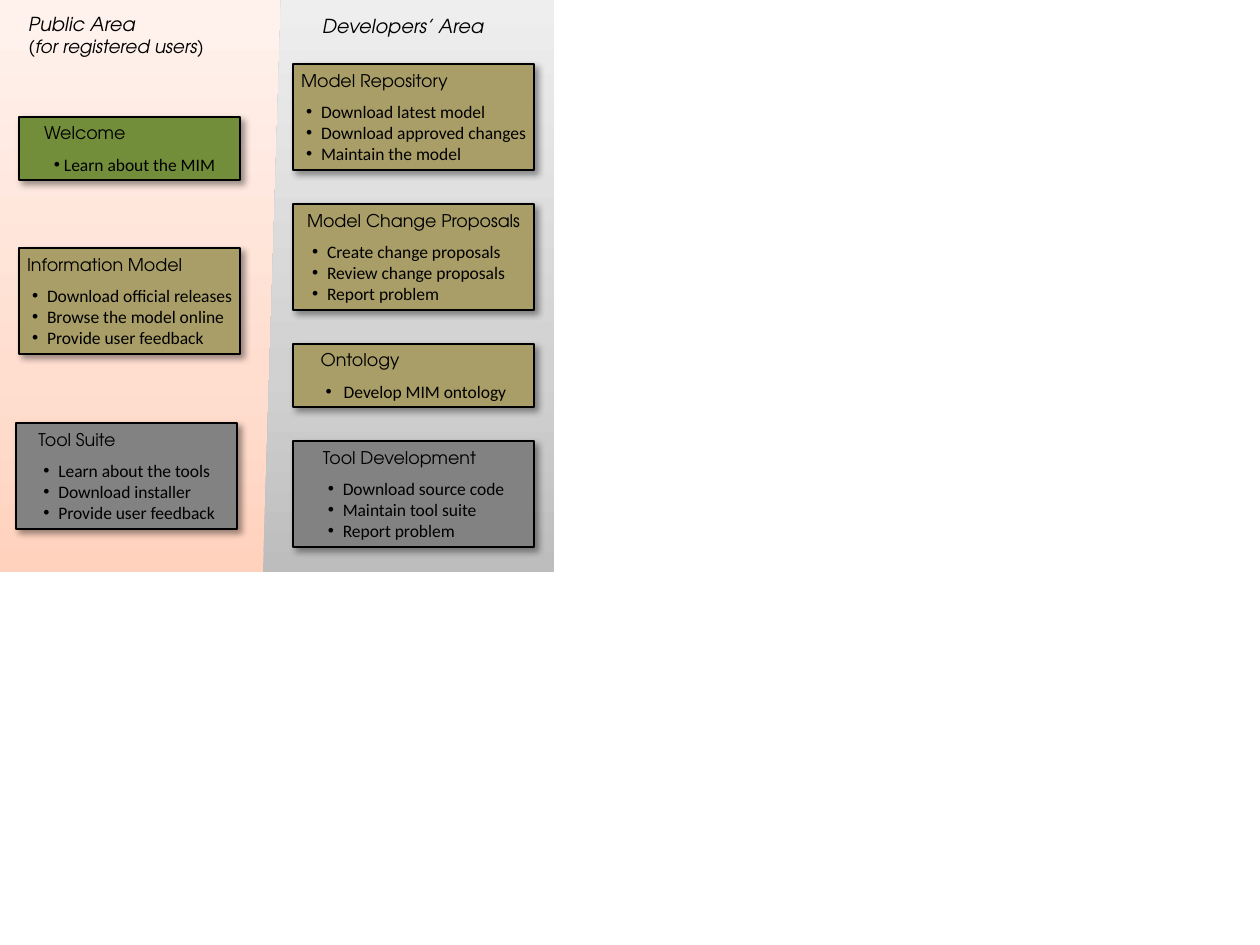
from collections import namedtuple

from lxml.etree import SubElement
from pptx import Presentation
from pptx.dml.color import RGBColor
from pptx.enum.shapes import MSO_SHAPE
from pptx.enum.text import MSO_ANCHOR, MSO_AUTO_SIZE
from pptx.oxml.ns import qn
from pptx.util import Emu, Pt

PX_PER_INCH = 126
HEADING_FONT = "TeX Gyre Adventor"
BODY_FONT = "Calibri"

BLACK = RGBColor(0x00, 0x00, 0x00)
GREEN = RGBColor(0x72, 0x8E, 0x3A)
KHAKI = RGBColor(0xA9, 0x9E, 0x67)
GREY = RGBColor(0x82, 0x82, 0x82)
GREY_FADE = [(0, RGBColor(0xBD, 0xBD, 0xBD)),
             (35, RGBColor(0xD1, 0xD1, 0xD1)),
             (100, RGBColor(0xEE, 0xEE, 0xEE))]
PEACH_FADE = [(0, RGBColor(0xFF, 0xD2, 0xBD)),
              (35, RGBColor(0xFF, 0xDE, 0xD0)),
              (100, RGBColor(0xFF, 0xF2, 0xED))]

Box = namedtuple("Box", "left top width height")
Card = namedtuple("Card", "title items color indent hanging", defaults=(20, 15))

CARD_INSET = 5
CARD_GAP = 34

WELCOME = Card("Welcome", ["Learn about the MIM"], GREEN, hanging=10)
INFORMATION_MODEL = Card(
    "Information Model",
    ["Download official releases", "Browse the model online", "Provide user feedback"],
    KHAKI)
TOOL_SUITE = Card(
    "Tool Suite",
    ["Learn about the tools", "Download installer", "Provide user feedback"], GREY)
DEVELOPER_CARDS = [
    Card("Model Repository",
         ["Download latest model", "Download approved changes", "Maintain the model"],
         KHAKI),
    Card("Model Change Proposals",
         ["Create change proposals", "Review change proposals", "Report problem"],
         KHAKI),
    Card("Ontology", ["Develop MIM ontology"], KHAKI, indent=23, hanging=18),
    Card("Tool Development",
         ["Download source code", "Maintain tool suite", "Report problem"], GREY),
]


def px(length):
    return Emu(round(length * 914400 / PX_PER_INCH))


def place(box):
    return [px(length) for length in box]


def card_height(card):
    return 42 + 21 * len(card.items) + (1 if len(card.items) > 1 else 0)


def add_faded_shape(slide, kind, box, stops):
    """Add a borderless shape whose colour fades from bottom to top."""
    shape = slide.shapes.add_shape(kind, *place(box))
    shape.shadow.inherit = False
    shape.line.fill.background()
    shape.fill.gradient()
    shape.fill.gradient_angle = 90
    stop_list = shape._element.spPr.find(".//" + qn("a:gsLst"))
    for stop in list(stop_list):
        stop_list.remove(stop)
    for position, color in stops:
        stop = SubElement(stop_list, qn("a:gs"), pos=str(position * 1000))
        SubElement(stop, qn("a:srgbClr"), val=str(color))
    return shape


def add_area_title(slide, box, lines):
    """Add an italic title; lines holds (text, size) pairs."""
    frame = slide.shapes.add_textbox(*place(box)).text_frame
    frame.word_wrap = False
    frame.auto_size = MSO_AUTO_SIZE.SHAPE_TO_FIT_TEXT
    para = frame.paragraphs[0]
    for number, (text, size) in enumerate(lines):
        if number:
            para.add_line_break()
        span = para.add_run()
        span.text = text
        span.font.name = HEADING_FONT
        span.font.size = Pt(size)
        span.font.italic = True
        span.font.color.rgb = BLACK


def add_shadow(shape):
    shape.shadow.inherit = False
    effects = shape._element.spPr.find(qn("a:effectLst"))
    shadow = SubElement(effects, qn("a:outerShdw"), blurRad=str(Pt(4)),
                        dist=str(Pt(3)), dir=str(45 * 60000), rotWithShape="0")
    color = SubElement(shadow, qn("a:srgbClr"), val=str(BLACK))
    SubElement(color, qn("a:alpha"), val="40000")


def style_paragraph(para, text, font_name):
    para.text = text
    para.font.name = font_name
    para.font.size = Pt(10)
    para.font.color.rgb = BLACK


def add_bullet(para, indent, hanging):
    properties = para._p.get_or_add_pPr()
    properties.set("marL", str(px(indent)))
    properties.set("indent", str(-px(hanging)))
    bullet_font = properties.makeelement(qn("a:buFont"), {"typeface": "Arial"})
    bullet = properties.makeelement(qn("a:buChar"), {"char": "•"})
    properties.find(qn("a:defRPr")).addprevious(bullet_font)
    bullet_font.addnext(bullet)


def add_card(slide, left, top, width, card):
    box = Box(left, top, width, card_height(card))
    shape = slide.shapes.add_shape(MSO_SHAPE.ROUNDED_RECTANGLE, *place(box))
    shape.adjustments[0] = 0
    shape.fill.solid()
    shape.fill.fore_color.rgb = card.color
    shape.line.color.rgb = BLACK
    shape.line.width = Pt(1)
    add_shadow(shape)

    frame = shape.text_frame
    frame.word_wrap = True
    frame.auto_size = MSO_AUTO_SIZE.SHAPE_TO_FIT_TEXT
    frame.vertical_anchor = MSO_ANCHOR.MIDDLE
    frame.margin_left = frame.margin_right = px(CARD_INSET)
    frame.margin_top = frame.margin_bottom = px(CARD_INSET)
    # Centres the left-aligned lines as one block.
    frame._txBody.bodyPr.set("anchorCtr", "1")

    heading = frame.paragraphs[0]
    style_paragraph(heading, card.title, HEADING_FONT)
    heading.space_after = Pt(6)
    for item in card.items:
        para = frame.add_paragraph()
        style_paragraph(para, item, BODY_FONT)
        add_bullet(para, card.indent, card.hanging)
    for para in frame.paragraphs:
        para._p.get_or_add_pPr().set("algn", "l")


def add_public_area(slide, box):
    wedge_width = 18
    add_faded_shape(slide, MSO_SHAPE.RECTANGLE, box, PEACH_FADE)
    wedge = add_faded_shape(
        slide, MSO_SHAPE.RIGHT_TRIANGLE,
        Box(box.left + box.width - wedge_width, box.top, wedge_width, box.height),
        GREY_FADE)
    wedge._element.spPr.find(qn("a:xfrm")).set("flipH", "1")
    add_area_title(slide, Box(box.left + 16, box.top + 6, 219, 58),
                   [("Public Area", 11), ("(for registered users)", 10.5)])
    for left, top, card in [(19, 117, WELCOME), (19, 248, INFORMATION_MODEL),
                            (16, 423, TOOL_SUITE)]:
        add_card(slide, box.left + left, box.top + top, 221, card)


def add_developer_area(slide, box):
    add_faded_shape(slide, MSO_SHAPE.RECTANGLE, box, GREY_FADE)
    add_area_title(slide, Box(box.left + 29, box.top + 8, 190, 37),
                   [("Developers’ Area", 11)])
    top = box.top + 64
    for card in DEVELOPER_CARDS:
        add_card(slide, box.left + 12, top, 241, card)
        top += card_height(card) + CARD_GAP


def main():
    deck = Presentation()
    deck.slide_width = px(1260)
    deck.slide_height = px(945)
    page = deck.slides.add_slide(deck.slide_layouts[6])
    add_developer_area(page, Box(281, 0, 273, 572))
    add_public_area(page, Box(0, 0, 281, 572))
    deck.save("out.pptx")


if __name__ == "__main__":
    main()
